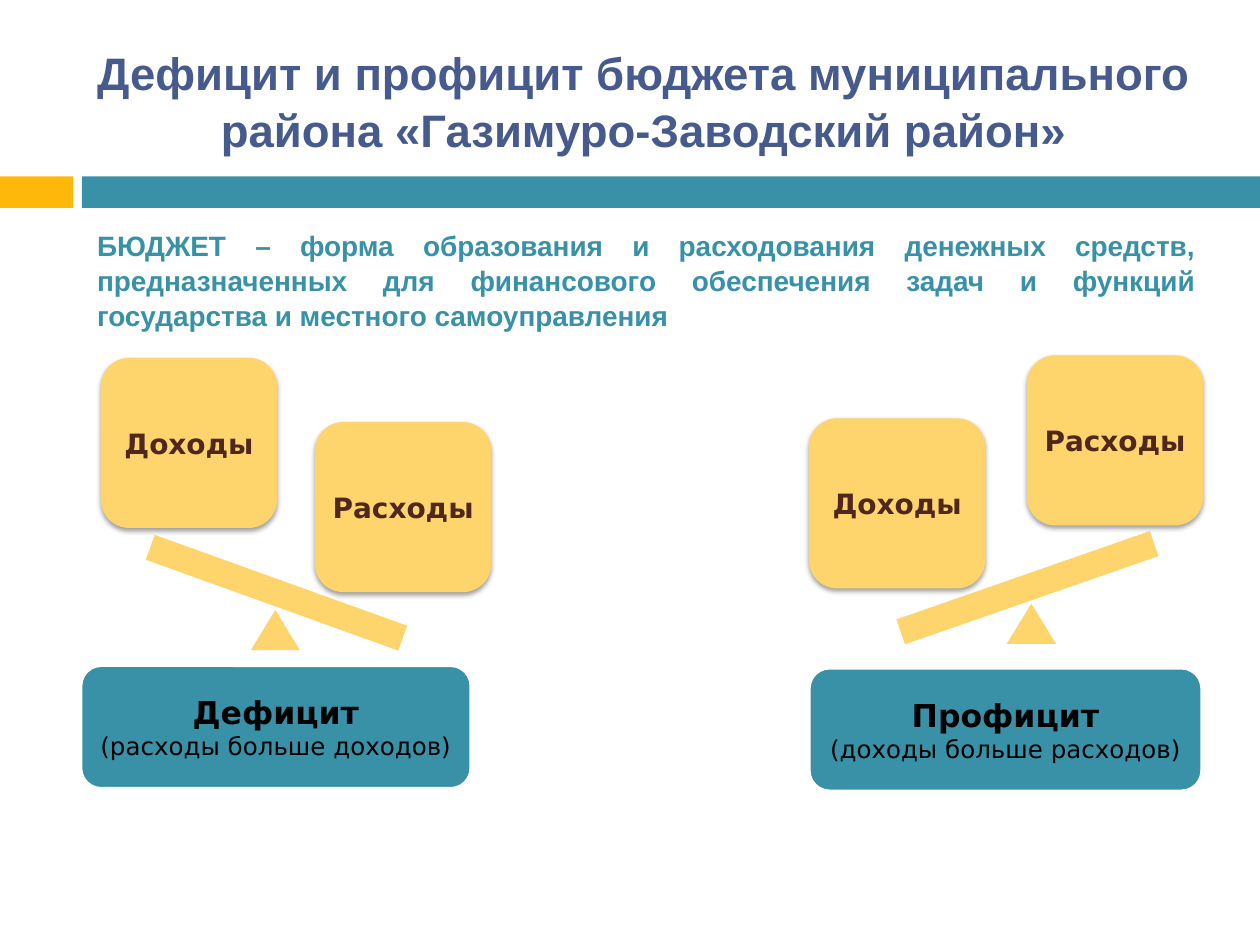
import pptx
import pptx.dml.color
import pptx.enum.shapes
import pptx.enum.text
import pptx.oxml
import pptx.oxml.ns
import pptx.util

COLUMNS, ROWS = 100, 75
TEAL, AMBER, SAND = "3891A7", "FEB80A", "FED46C"
BROWN, NAVY, BLACK, WHITE = "4F271C", "475A8D", "000000", "FFFFFF"
SHAPES = pptx.enum.shapes.MSO_SHAPE
ALIGN = pptx.enum.text.PP_ALIGN
ANCHOR = pptx.enum.text.MSO_ANCHOR


def color(hex_string):
    return pptx.dml.color.RGBColor.from_string(hex_string)


class SlideBuilder:
    """Places styled elements on a 100 by 75 grid."""

    heading_font = "Arial"
    label_font = "DejaVu Sans"

    def __init__(self, presentation):
        self.column = presentation.slide_width / COLUMNS
        self.row = presentation.slide_height / ROWS
        self.slide = presentation.slides.add_slide(presentation.slide_layouts[1])

    def frame(self, left, top, width, height):
        return {"left": round(left * self.column), "top": round(top * self.row),
                "width": round(width * self.column), "height": round(height * self.row)}

    def apply(self, target, values):
        for name, value in values.items():
            setattr(target, name, value)

    def add_text(self, paragraph, text, size, hex_string, font, bold=True, align=ALIGN.CENTER):
        paragraph.alignment = align
        run = paragraph.add_run()
        run.text = text
        self.apply(run.font, {"name": font, "size": pptx.util.Pt(size), "bold": bold})
        run.font.color.rgb = color(hex_string)

    def placeholder(self, index, box, text, size, hex_string, align, anchor):
        shape = self.slide.placeholders[index]
        self.apply(shape, self.frame(*box))
        self.apply(shape.text_frame, {"word_wrap": True, "vertical_anchor": anchor,
                                      "auto_size": pptx.enum.text.MSO_AUTO_SIZE.NONE})
        paragraph = shape.text_frame.paragraphs[0]
        self.apply(paragraph, {"line_spacing": 1.05, "space_before": pptx.util.Pt(0)})
        self.add_text(paragraph, text, size, hex_string, self.heading_font, align=align)
        return paragraph

    def title(self, box, text):
        self.placeholder(0, box, text, 26, NAVY, ALIGN.CENTER, ANCHOR.MIDDLE)

    def body(self, box, text):
        paragraph = self.placeholder(1, box, text, 16, TEAL, ALIGN.JUSTIFY, ANCHOR.TOP)
        properties = paragraph._p.get_or_add_pPr()
        properties.set("marL", "0")
        properties.set("indent", "0")
        properties.append(pptx.oxml.parse_xml(f"<a:buNone {pptx.oxml.ns.nsdecls('a')}/>"))

    def shape(self, kind, box, fill, parent=None, rotation=0, line=None):
        shapes = (parent or self.slide).shapes
        shape = shapes.add_shape(kind, **self.frame(*box))
        shape.rotation = rotation
        shape.shadow.inherit = False
        shape.fill.solid()
        shape.fill.fore_color.rgb = color(fill)
        if line:
            shape.line.color.rgb = color(line)
            shape.line.width = pptx.util.Pt(2)
        else:
            shape.line.fill.background()
        return shape

    def label(self, shape, lines):
        text_frame = shape.text_frame
        narrow, thin = pptx.util.Inches(0.04), pptx.util.Inches(0.05)
        self.apply(text_frame, {"margin_left": narrow, "margin_right": narrow,
                                "margin_top": thin, "margin_bottom": thin,
                                "word_wrap": True, "vertical_anchor": ANCHOR.MIDDLE})
        for number, (text, size, hex_string, bold) in enumerate(lines):
            paragraph = text_frame.add_paragraph() if number else text_frame.paragraphs[0]
            self.add_text(paragraph, text, size, hex_string, self.label_font, bold)

    def weight(self, group, left, top, text):
        shape = self.shape(SHAPES.ROUNDED_RECTANGLE, (left, top, 14, 13.5), SAND, group)
        effects = shape._element.spPr.find(pptx.oxml.ns.qn("a:effectLst"))
        effects.append(pptx.oxml.parse_xml(
            f'<a:outerShdw {pptx.oxml.ns.nsdecls("a")} blurRad="39370" dist="20320" '
            'dir="5400000" rotWithShape="0"><a:srgbClr val="000000">'
            '<a:alpha val="38000"/></a:srgbClr></a:outerShdw>'))
        self.label(shape, [(text, 16, BROWN, True)])

    def scales(self, income, expenses, beam, rotation, pivot):
        group = self.slide.shapes.add_group_shape()
        self.weight(group, *income, "Доходы")
        self.weight(group, *expenses, "Расходы")
        self.shape(SHAPES.RECTANGLE, (*beam, 21.3, 2.1), SAND, group, rotation)
        self.shape(SHAPES.ISOSCELES_TRIANGLE, (*pivot, 3.9, 3.2), SAND, group)

    def caption(self, box, heading, explanation):
        shape = self.shape(SHAPES.ROUNDED_RECTANGLE, box, TEAL, line=WHITE)
        self.label(shape, [(heading, 18, BLACK, True), (explanation, 14, BLACK, False)])


def main():
    presentation = pptx.Presentation()
    presentation.slide_width = pptx.util.Inches(10)
    presentation.slide_height = pptx.util.Inches(7.5)
    builder = SlideBuilder(presentation)

    # Header band
    builder.shape(SHAPES.RECTANGLE, (0, 14, 5.8, 2.5), AMBER)
    builder.shape(SHAPES.RECTANGLE, (6.5, 14, 93.5, 2.5), TEAL)

    # Title and definition
    builder.title((6.4, 2.5, 89.4, 10.8),
                  "Дефицит и профицит бюджета муниципального района «Газимуро-Заводский район»")
    builder.body((6.7, 17.5, 89.2, 49.2),
                 "БЮДЖЕТ – форма образования и расходования денежных средств, предназначенных "
                 "для финансового обеспечения задач и функций государства и местного самоуправления")

    # Deficit
    builder.scales(income=(8, 28.4), expenses=(25, 33.5), beam=(11.3, 46),
                   rotation=19.8, pivot=(19.9, 48.4))
    builder.caption((6.4, 52.8, 31, 9.8), "Дефицит", "(расходы больше доходов)")

    # Surplus
    builder.scales(income=(64.2, 33.2), expenses=(81.5, 28.2), beam=(70.9, 45.6),
                   rotation=-19.2, pivot=(79.9, 47.9))
    builder.caption((64.2, 53, 31.2, 9.8), "Профицит", "(доходы больше расходов)")

    presentation.save("out.pptx")


if __name__ == "__main__":
    main()
